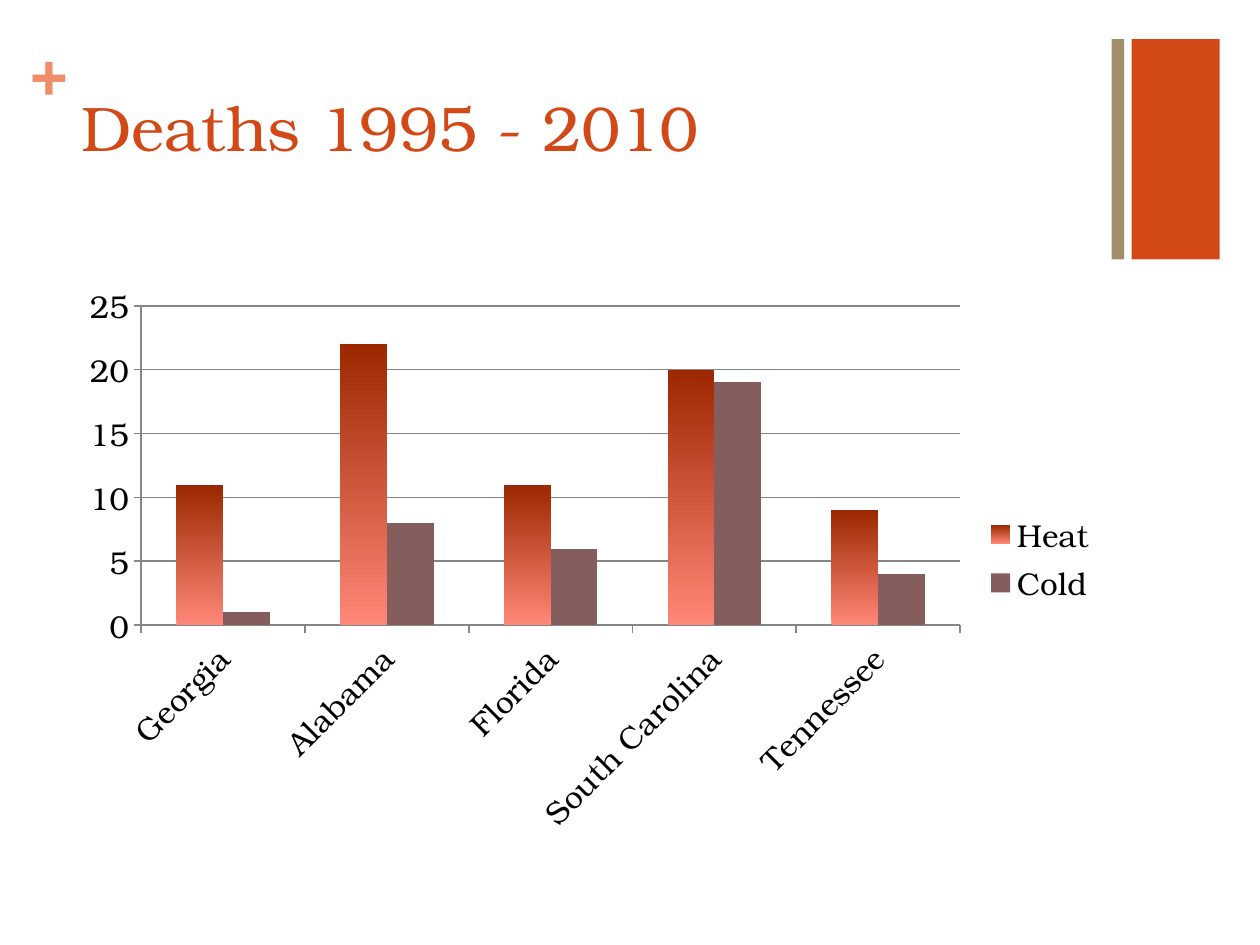
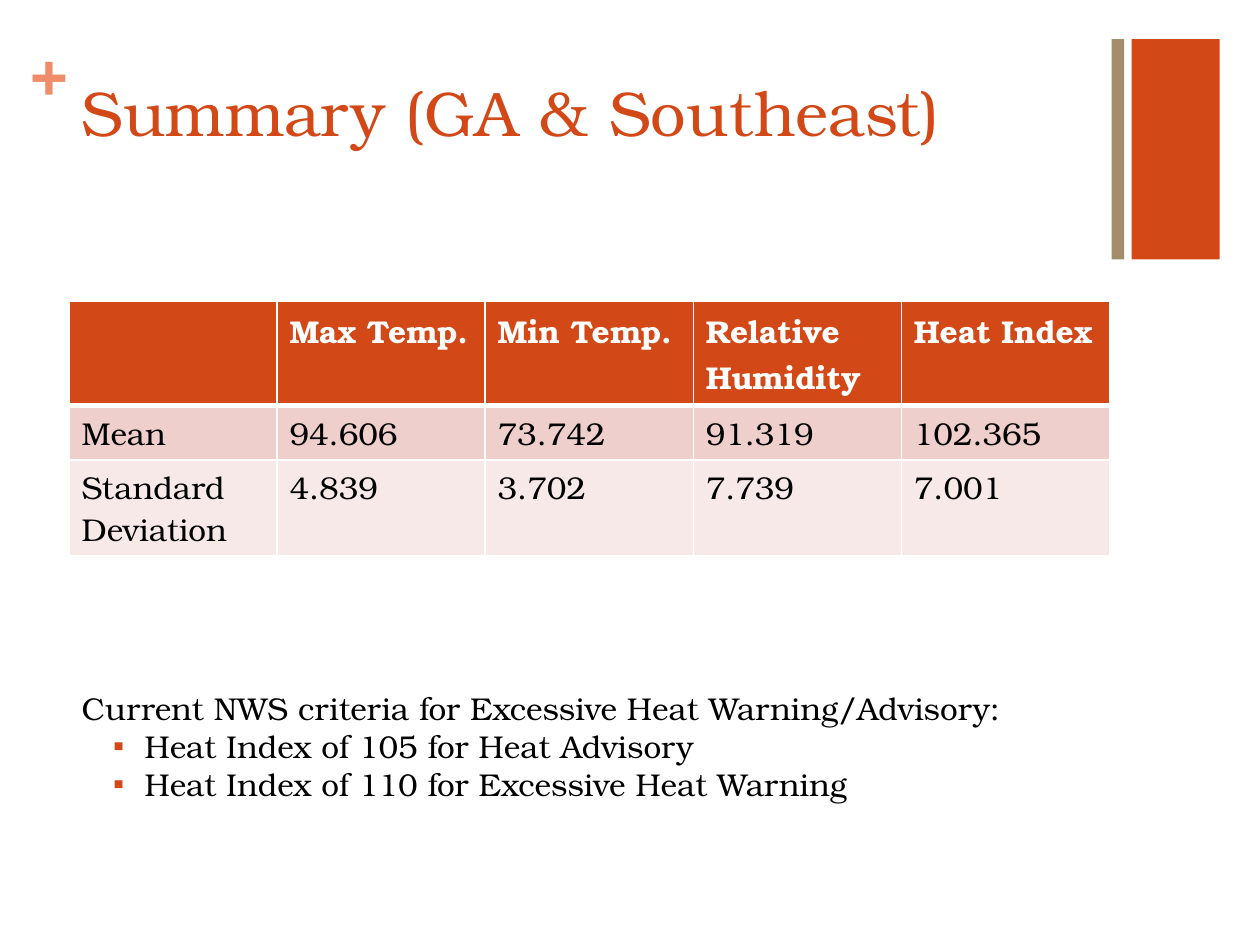
from pptx import Presentation
from pptx.chart.data import CategoryChartData
from pptx.dml.color import RGBColor
from pptx.enum import chart as ch, shapes, text
from pptx.oxml.ns import qn
from pptx.util import Pt
from lxml import etree

FONT = "TeX Gyre Bonum"
RUST = RGBColor(0xD3, 0x48, 0x17)
SAND = RGBColor(0xA2, 0x8E, 0x6A)
PEACH = RGBColor(0xEF, 0x8C, 0x6A)
MAUVE = RGBColor(0x85, 0x5D, 0x5D)
DARK = RGBColor(0x9B, 0x28, 0x00)
LIGHT = RGBColor(0xFF, 0x87, 0x78)
ROSE = RGBColor(0xEF, 0xCF, 0xCC)
BLUSH = RGBColor(0xF7, 0xE9, 0xE8)
GREY = RGBColor(0x86, 0x86, 0x86)
BLACK = RGBColor(0, 0, 0)
WHITE = RGBColor(0xFF, 0xFF, 0xFF)

LEFT, WIDE = 39.4, 594.7
TITLE_ONLY, TITLE_BODY = 5, 1


def style(font, size=18, color=BLACK, bold=False):
    font.name, font.size, font.bold = FONT, Pt(size), bold
    font.color.rgb = color


def place(shape, *box):
    shape.left, shape.top, shape.width, shape.height = map(Pt, box)


def edge(cell, side, width):
    """Draw one white cell border; call in the order L, R, T, B."""
    props = cell._tc.get_or_add_tcPr()
    line = etree.Element(qn(f"a:ln{side}"), w=str(Pt(width)))
    fill = etree.SubElement(line, qn("a:solidFill"))
    etree.SubElement(fill, qn("a:srgbClr"), val=str(WHITE))
    props.insert("LRTB".index(side), line)


def indent(para, left, hang, mark=None):
    """Set the indent, with a rust bullet if a mark is given."""
    props = para._p.get_or_add_pPr()
    props.set("marL", str(Pt(left)))
    props.set("indent", str(-Pt(hang)))
    if mark:
        tint = etree.SubElement(props, qn("a:buClr"))
        etree.SubElement(tint, qn("a:srgbClr"), val=str(RUST))
        etree.SubElement(props, qn("a:buChar"), char=mark)
    else:
        etree.SubElement(props, qn("a:buNone"))


class Deck:
    def __init__(self):
        self.prs = Presentation()
        self.prs.slide_width, self.prs.slide_height = Pt(720), Pt(540)

    def add(self, layout, title, top):
        self.slide = self.prs.slides.add_slide(self.prs.slide_layouts[layout])
        self.band(646.6, 50.4, RUST)
        self.band(635.2, 7.2, SAND)
        self.plus()
        self.title(title, top)

    def band(self, left, width, color):
        bar = self.slide.shapes.add_shape(
            shapes.MSO_SHAPE.RECTANGLE, Pt(left), Pt(22.3), Pt(width), Pt(126))
        bar.shadow.inherit = False
        bar.fill.solid()
        bar.fill.fore_color.rgb = color
        bar.line.fill.background()

    def plus(self):
        box = self.slide.shapes.add_textbox(Pt(17.3), Pt(18), Pt(21), Pt(44))
        frame = box.text_frame
        frame.margin_left = frame.margin_right = 0
        frame.margin_top = frame.margin_bottom = 0
        frame.text = "+"
        style(frame.paragraphs[0].font, 36, PEACH, True)

    def title(self, words, top):
        shape = self.slide.shapes.title
        place(shape, LEFT, top, WIDE, 87.8)
        frame = shape.text_frame
        frame.text = words
        frame.vertical_anchor = text.MSO_ANCHOR.TOP
        frame.auto_size = text.MSO_AUTO_SIZE.NONE
        para = frame.paragraphs[0]
        para.alignment = text.PP_ALIGN.LEFT
        style(para.font, 36, RUST)

    def chart(self, cats, series, top, height):
        data = CategoryChartData()
        data.categories = cats
        for name, vals in series.items():
            data.add_series(name, vals)
        chart = self.slide.shapes.add_chart(
            ch.XL_CHART_TYPE.COLUMN_CLUSTERED, Pt(LEFT), Pt(top),
            Pt(WIDE), Pt(height), data).chart
        style(chart.font)
        chart.has_title = False
        chart.has_legend = True
        chart.legend.position = ch.XL_LEGEND_POSITION.RIGHT
        chart.legend.include_in_layout = False

        x, y = chart.category_axis, chart.value_axis
        y.minimum_scale, y.maximum_scale, y.major_unit = 0, 25, 5
        y.has_major_gridlines = True
        for axis in (x, y):
            axis.major_tick_mark = ch.XL_TICK_MARK.OUTSIDE
            axis.minor_tick_mark = ch.XL_TICK_MARK.NONE
            style(axis.tick_labels.font)
        for line in (x.format.line, y.format.line, y.major_gridlines.format.line):
            line.color.rgb, line.width = GREY, Pt(1)
        turn = x._element.find(qn("c:txPr")).find(qn("a:bodyPr"))
        turn.set("rot", str(-45 * 60000))

        plot = chart.plots[0]
        plot.vary_by_categories = False
        plot.gap_width, plot.overlap = 150, 0
        heat, cold = (s.format.fill for s in plot.series)
        heat.gradient()
        heat.gradient_angle = 90
        for stop, color in zip(heat.gradient_stops, (LIGHT, DARK)):
            stop.color.rgb = color
        cold.solid()
        cold.fore_color.rgb = MAUVE

    def table(self, rows, top, heights):
        cols = len(rows[0])
        grid = self.slide.shapes.add_table(
            len(rows), cols, Pt(LEFT), Pt(top), Pt(WIDE), Pt(sum(heights))).table
        for col in grid.columns:
            col.width = Pt(WIDE / cols)
        fills = (RUST, ROSE, BLUSH)
        for r, row in enumerate(rows):
            grid.rows[r].height = Pt(heights[r])
            head = r == 0
            for c, words in enumerate(row):
                cell = grid.cell(r, c)
                cell.text = words
                cell.fill.solid()
                cell.fill.fore_color.rgb = fills[r]
                para = cell.text_frame.paragraphs[0]
                style(para.font, 18, WHITE if head else BLACK, head)
                widths = (1, 1, 3 if r == 1 else 1, 3 if head else 1)
                for side, width in zip("LRTB", widths):
                    edge(cell, side, width)

    def body(self, lead, items, top, height):
        shape = self.slide.placeholders[1]
        place(shape, LEFT, top, WIDE, height)
        frame = shape.text_frame
        frame.text = "\n".join([lead, *items])
        frame.auto_size = text.MSO_AUTO_SIZE.NONE
        for i, para in enumerate(frame.paragraphs):
            para.space_before = Pt(0)
            style(para.font)
            if i:
                para.level = 1
                indent(para, 36, 18, "▪")
            else:
                indent(para, 0, 0)


def main():
    deck = Deck()

    deck.add(TITLE_ONLY, "Deaths 1995 - 2010", 46.8)
    deck.chart(
        ["Georgia", "Alabama", "Florida", "South Carolina", "Tennessee"],
        {"Heat": (11, 22, 11, 20, 9), "Cold": (1, 8, 6, 19, 4)}, 156.2, 326.2)

    deck.add(TITLE_BODY, "Summary (GA & Southeast)", 38.2)
    deck.table([
        ["", "Max Temp.", "Min Temp.", "Relative Humidity", "Heat Index"],
        ["Mean", "94.606", "73.742", "91.319", "102.365"],
        ["Standard Deviation", "4.839", "3.702", "7.739", "7.001"],
    ], 172.1, (59.6, 31.2, 55))
    deck.body("Current NWS criteria for Excessive Heat Warning/Advisory:",
              ["Heat Index of 105 for Heat Advisory",
               "Heat Index of 110 for Excessive Heat Warning"], 390.2, 72.7)

    deck.prs.save("out.pptx")


if __name__ == "__main__":
    main()
